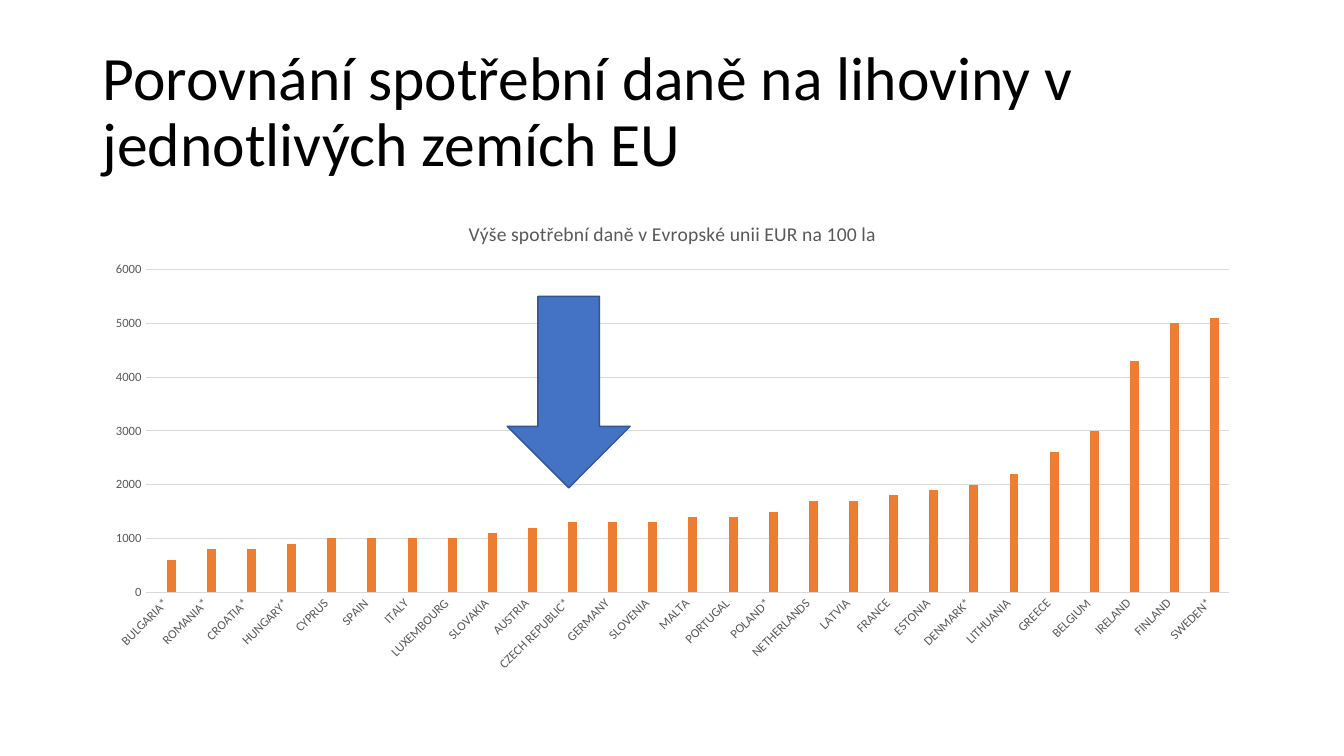
from dataclasses import dataclass

from pptx import Presentation
from pptx.chart.data import CategoryChartData
from pptx.dml.color import RGBColor
from pptx.enum.chart import XL_CHART_TYPE, XL_TICK_MARK
from pptx.enum.shapes import MSO_SHAPE
from pptx.enum.text import MSO_ANCHOR
from pptx.util import Inches, Pt


@dataclass(frozen=True)
class Theme:
    """Colours, typeface and type sizes of the slide."""
    font: str = "Calibri"
    ink: str = "000000"
    muted: str = "595959"
    grid: str = "D9D9D9"
    blue: str = "4472C4"
    blue_edge: str = "325491"
    orange: str = "ED7D31"
    title_size: float = 44
    chart_title_size: float = 14
    chart_size: float = 10
    axis_size: float = 9


THEME = Theme()

TAX_BY_COUNTRY = {
    "BULGARIA*": 600, "ROMANIA*": 800, "CROATIA*": 800, "HUNGARY*": 900,
    "CYPRUS": 1000, "SPAIN": 1000, "ITALY": 1000, "LUXEMBOURG": 1000,
    "SLOVAKIA": 1100, "AUSTRIA": 1200, "CZECH REPUBLIC*": 1300,
    "GERMANY": 1300, "SLOVENIA": 1300, "MALTA": 1400, "PORTUGAL": 1400,
    "POLAND*": 1500, "NETHERLANDS": 1700, "LATVIA": 1700, "FRANCE": 1800,
    "ESTONIA": 1900, "DENMARK*": 2000, "LITHUANIA": 2200, "GREECE": 2600,
    "BELGIUM": 3000, "IRELAND": 4300, "FINLAND": 5000, "SWEDEN*": 5100,
}


def style_font(font, size, color):
    """Apply the theme typeface with a size and colour."""
    font.name = THEME.font
    font.size = Pt(size)
    font.bold = False
    font.color.rgb = RGBColor.from_string(color)


def write_text(text_frame, text, *, size, color, line_spacing=None):
    """Write one formatted paragraph into a text frame."""
    paragraph = text_frame.paragraphs[0]
    paragraph.line_spacing = line_spacing
    run = paragraph.add_run()
    run.text = text
    style_font(run.font, size, color)


def style_line(line, color, width):
    """Give a line a solid colour and a width in points."""
    line.color.rgb = RGBColor.from_string(color)
    line.width = Pt(width)


def add_title(slide, left, top, width, height):
    """Place the slide heading in the given box."""
    box = slide.shapes.add_textbox(Inches(left), Inches(top), Inches(width), Inches(height))
    text_frame = box.text_frame
    text_frame.word_wrap = True
    text_frame.vertical_anchor = MSO_ANCHOR.MIDDLE
    write_text(text_frame, "Porovnání spotřební daně na lihoviny v jednotlivých zemích EU",
               size=THEME.title_size, color=THEME.ink, line_spacing=0.9)


def style_axes(chart):
    """Format the country axis and the tax axis."""
    for axis in (chart.category_axis, chart.value_axis):
        axis.major_tick_mark = XL_TICK_MARK.NONE
        axis.minor_tick_mark = XL_TICK_MARK.NONE
        style_font(axis.tick_labels.font, THEME.axis_size, THEME.muted)
    countries, tax = chart.category_axis, chart.value_axis
    style_line(countries.format.line, THEME.grid, 0.75)
    countries.tick_labels.font
    countries._element.txPr.bodyPr.set("rot", str(-45 * 60000))
    tax.minimum_scale, tax.maximum_scale, tax.major_unit = 0, 6000, 1000
    tax.tick_labels.number_format = "General"
    tax.tick_labels.number_format_is_linked = False
    tax.format.line.fill.background()
    style_line(tax.major_gridlines.format.line, THEME.grid, 0.75)


def add_tax_chart(slide, left, top, width, height):
    """Place the column chart of tax by country in the given box."""
    data = CategoryChartData()
    data.categories = list(TAX_BY_COUNTRY)
    data.add_series("Series 1", [None] * len(TAX_BY_COUNTRY))
    data.add_series("Series 2", list(TAX_BY_COUNTRY.values()))
    chart = slide.shapes.add_chart(
        XL_CHART_TYPE.COLUMN_CLUSTERED, Inches(left), Inches(top),
        Inches(width), Inches(height), data).chart
    style_font(chart.font, THEME.chart_size, THEME.ink)
    chart.has_legend = False
    chart.has_title = True
    write_text(chart.chart_title.text_frame, "Výše spotřební daně v Evropské unii EUR na 100 la",
               size=THEME.chart_title_size, color=THEME.muted)
    chart.chart_title.include_in_layout = False
    plot = chart.plots[0]
    plot.vary_by_categories = False
    plot.gap_width = 219
    plot.overlap = -27
    for series, color in zip(plot.series, (THEME.blue, THEME.orange)):
        series.format.fill.solid()
        series.format.fill.fore_color.rgb = RGBColor.from_string(color)
    style_axes(chart)


def add_pointer(slide, left, top, width, height):
    """Place the arrow that points down at the Czech Republic."""
    arrow = slide.shapes.add_shape(MSO_SHAPE.RIGHT_ARROW, Inches(left), Inches(top),
                                   Inches(width), Inches(height))
    arrow.rotation = 90
    arrow.shadow.inherit = False
    arrow.fill.solid()
    arrow.fill.fore_color.rgb = RGBColor.from_string(THEME.blue)
    style_line(arrow.line, THEME.blue_edge, 1)


def main():
    """Build the slide and save it."""
    presentation = Presentation()
    presentation.slide_width = Inches(13.33)
    presentation.slide_height = Inches(7.5)
    slide = presentation.slides.add_slide(presentation.slide_layouts[6])
    add_title(slide, 0.92, 0.4, 11.5, 1.45)
    add_tax_chart(slide, 0.92, 2, 11.5, 4.76)
    add_pointer(slide, 4.69, 3.28, 1.9, 1.22)
    presentation.save("out.pptx")


if __name__ == "__main__":
    main()
